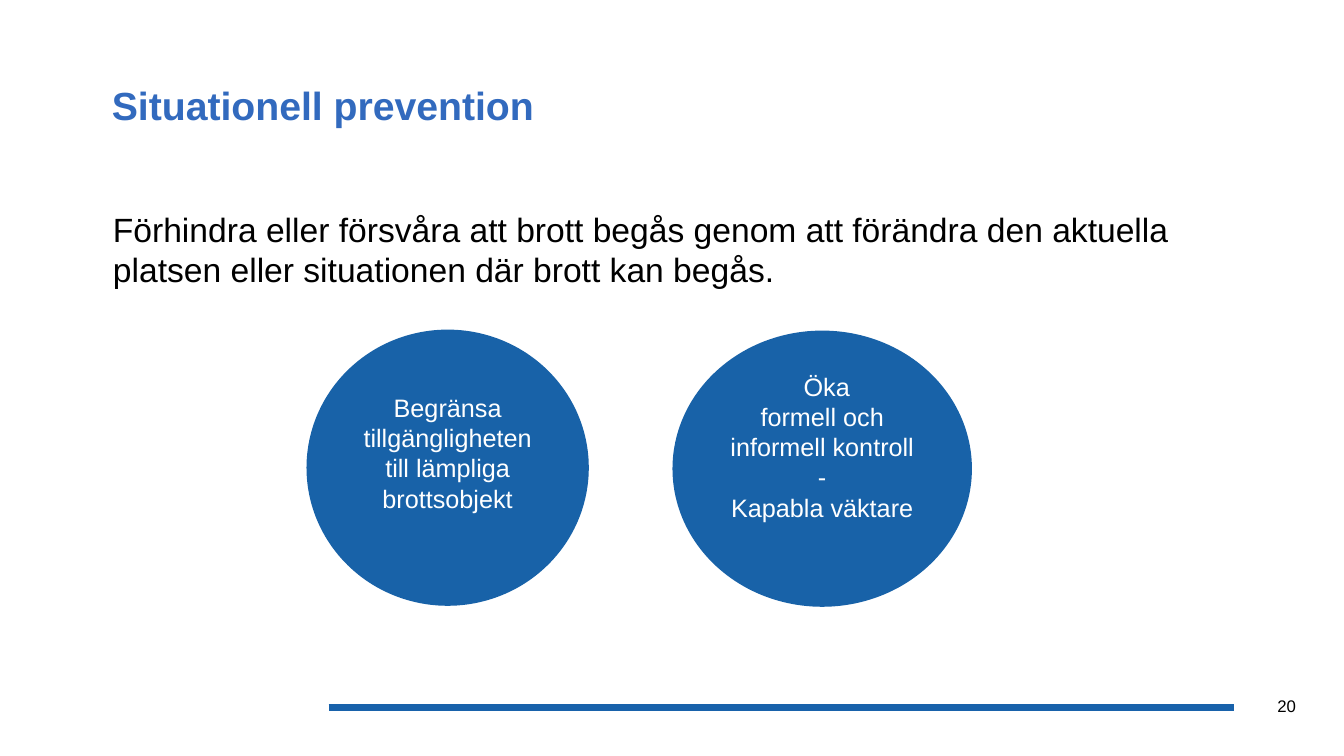
from pptx import Presentation
from pptx.dml.color import RGBColor
from pptx.enum import shapes, text
from pptx.oxml import parse_xml
from pptx.oxml.ns import nsdecls
from pptx.util import Inches, Pt

TITLE_BLUE = RGBColor(0x32, 0x6A, 0xBE)
CIRCLE_BLUE = RGBColor(0x18, 0x62, 0xA8)
RULE_BLUE = RGBColor(0x18, 0x62, 0xAB)
BLACK = RGBColor(0, 0, 0)
WHITE = RGBColor(0xFF, 0xFF, 0xFF)
LEFT, CENTER = text.PP_ALIGN.LEFT, text.PP_ALIGN.CENTER
TOP, MIDDLE = text.MSO_ANCHOR.TOP, text.MSO_ANCHOR.MIDDLE


def place(shape, left, top, width, height):
    shape.left, shape.top = Inches(left), Inches(top)
    shape.width, shape.height = Inches(width), Inches(height)


def write(shape, words, size, color, insets, anchor=TOP, align=LEFT, bold=False):
    """Fill a shape with one paragraph; insets are left, top, right, bottom in inches."""
    frame = shape.text_frame
    frame.text = words
    frame.word_wrap = True
    frame.auto_size = text.MSO_AUTO_SIZE.NONE
    frame.vertical_anchor = anchor
    (frame.margin_left, frame.margin_top,
     frame.margin_right, frame.margin_bottom) = map(Inches, insets)
    paragraph = frame.paragraphs[0]
    paragraph.alignment = align
    paragraph.space_before = Pt(0)
    for run in paragraph.runs:
        run.font.name = "Arial"
        run.font.size = Pt(size)
        run.font.bold = bold
        run.font.color.rgb = color
    return paragraph


def remove_bullet(paragraph):
    properties = paragraph._p.get_or_add_pPr()
    properties.set("marL", "0")
    properties.set("indent", "0")
    properties.append(parse_xml(f"<a:buNone {nsdecls('a')}/>"))


def add_circle(slide, box, words, insets, anchor):
    circle = slide.shapes.add_shape(shapes.MSO_SHAPE.OVAL, *map(Inches, box))
    circle.shadow.inherit = False
    circle.fill.solid()
    circle.fill.fore_color.rgb = CIRCLE_BLUE
    circle.line.fill.background()
    return write(circle, words, 18, WHITE, insets, anchor, CENTER)


def add_footer(slide, number):
    rule = slide.shapes.add_connector(
        shapes.MSO_CONNECTOR.STRAIGHT,
        Inches(3.26), Inches(7.02), Inches(12.24), Inches(7.02))
    rule.line.color.rgb = RULE_BLUE
    rule.line.width = Pt(4.5)
    rule._element.spPr.append(parse_xml(f"<a:effectLst {nsdecls('a')}/>"))
    page = slide.shapes.add_textbox(
        Inches(12.57), Inches(6.85), Inches(0.55), Inches(0.3))
    write(page, number, 12, BLACK, (0.1, 0.05, 0.1, 0.05))


def main():
    deck = Presentation()
    deck.slide_width, deck.slide_height = Inches(13.33), Inches(7.5)
    slide = deck.slides.add_slide(deck.slide_layouts[1])
    add_footer(slide, "20")

    title, body = slide.shapes.title, slide.placeholders[1]
    place(title, 1.03, 0.42, 11.21, 1.25)
    write(title, "Situationell prevention", 28, TITLE_BLUE,
          (0.08, 0.05, 0.08, 0.05), MIDDLE, bold=True)
    place(body, 1.03, 2.02, 11.14, 4.4)
    definition = write(
        body,
        "Förhindra eller försvåra att brott begås genom att förändra "
        "den aktuella platsen eller situationen där brott kan begås.",
        24, BLACK, (0.09, 0.05, 0.09, 0.05))
    remove_bullet(definition)

    add_circle(slide, (3.04, 3.27, 2.8, 2.74),
               "Begränsa tillgängligheten till lämpliga\vbrottsobjekt",
               (0.07, 0.04, 0.07, 0.34), MIDDLE)
    control = add_circle(
        slide, (6.67, 3.28, 2.97, 2.74),
        "Öka\vformell och\vinformell kontroll\v-\vKapabla väktare",
        (0.07, 0, 0.07, 0.04), TOP)
    control._p.get_or_add_pPr().set("indent", str(Inches(0.09)))

    deck.save("out.pptx")


if __name__ == "__main__":
    main()
